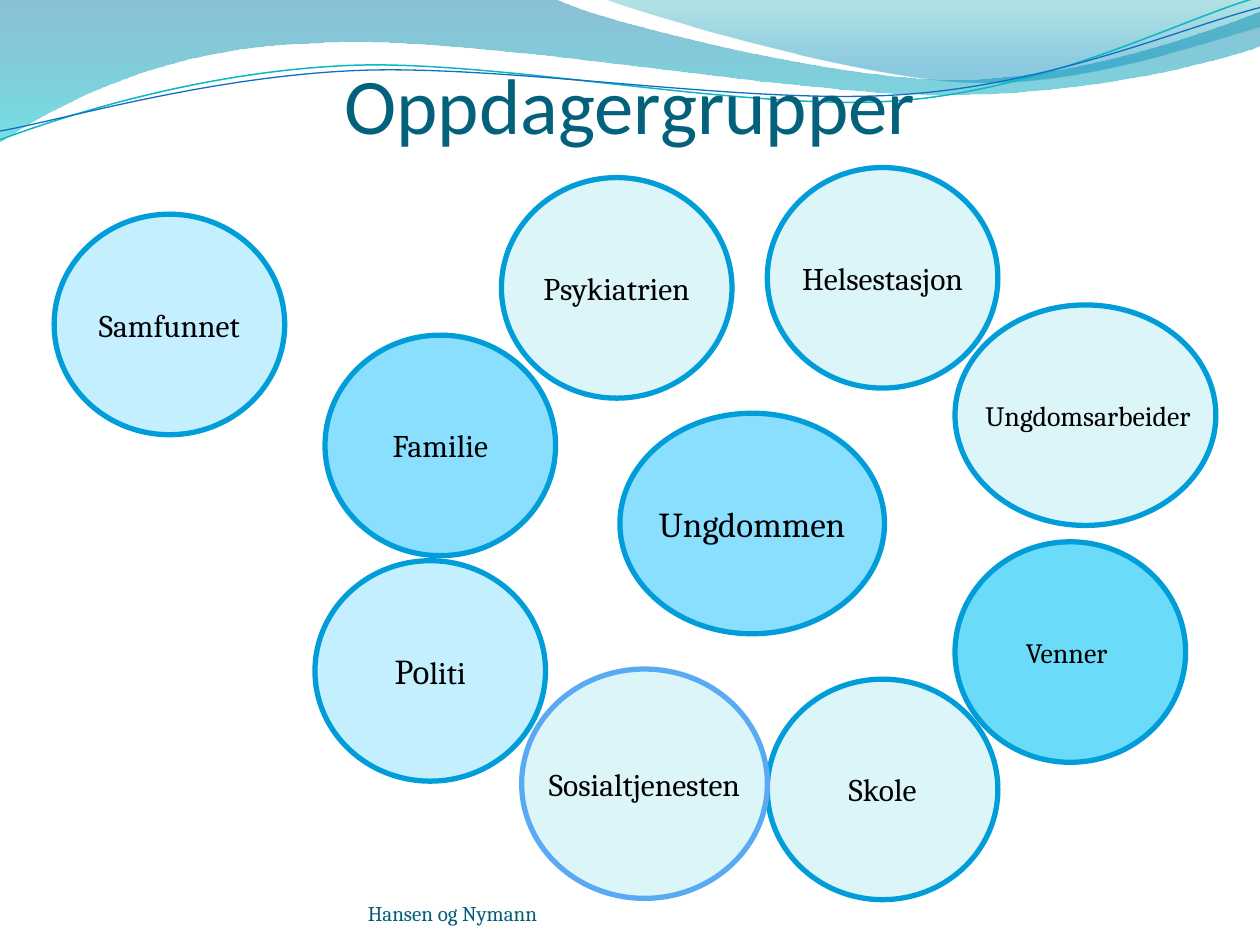
"""Build the Oppdagergrupper slide: a waved header over circles of helpers around the young."""
from dataclasses import dataclass

from lxml import etree
from pptx import Presentation
from pptx.dml.color import RGBColor
from pptx.enum import shapes, text
from pptx.oxml.ns import qn
from pptx.util import Inches, Pt

PALE, ICE, SKY, AQUA = "DBF5F9", "C4EFFF", "8ADFFF", "6BDBFA"


@dataclass
class Circle:
    label: str
    left: float
    top: float
    fill: str
    size: int = 18
    width: float = 1.83
    height: float = 1.75
    line: str = "009DD9"
    shift: float = 0
    lead: str = ""


@dataclass
class Wave:
    start: tuple
    segments: list
    stops: tuple = ()
    line: str = ""
    weight: float = 0


WAVES = [
    Wave((0, 0), [(4.4, -0.01), (4.76, 0.17, 6.64, 0.63, 7.58, 0.63),
                  (8.53, 0.63, 9.58, 0.26, 10, 0.09), (10.01, 0.36),
                  (9.83, 0.44, 8.7, 0.76, 7.46, 0.75), (6.22, 0.75, 3.82, 0.28, 2.57, 0.34),
                  (1.29, 0.36, 0.46, 0.83, -0.01, 1.13)],
         stops=((0, "0074A1", 45), (1, "00C6CF", 55))),
    Wave((4.79, -0.01), [(5.09, 0.11, 6.82, 0.62, 7.69, 0.65),
                         (8.56, 0.69, 9.61, 0.32, 10, 0.21), (10, 0)],
         stops=((0, "00A1A9", 30), (0.8, "008BBF", 45))),
    Wave((0, 1.11), [(0.48, 0.93, 1.58, 0.57, 2.77, 0.52), (3.95, 0.47, 5.93, 0.89, 7.13, 0.8),
                     (8.33, 0.71, 9.38, 0.15, 9.98, -0.02)], line="0AB8BF", weight=0.85),
    Wave((0, 1.04), [(0.47, 0.96, 1.64, 0.61, 2.83, 0.56), (4.03, 0.51, 5.97, 0.84, 7.17, 0.75),
                     (8.36, 0.67, 9.41, 0.21, 10, 0.06)], line="0F6FC6", weight=0.75),
]

CIRCLES = [
    Circle("Ungdommen", 4.92, 3.28, SKY, size=20, width=2.1),
    Circle("Familie", 2.58, 2.66, SKY),
    Circle("Ungdomsarbeider", 7.58, 2.42, PALE, size=16, width=2.07, shift=0.02),
    Circle("Venner", 7.58, 4.3, AQUA, size=16, shift=-0.03),
    Circle("Skole", 6.09, 5.39, PALE),
    Circle("Sosialtjenesten", 4.14, 5.31, PALE, width=1.95, height=1.82, line="59AAF2"),
    Circle("liti", 2.5, 4.45, ICE, lead="Po"),
    Circle("Helsestasjon", 6.09, 1.33, PALE),
    Circle("Psykiatrien", 3.98, 1.41, PALE),
    Circle("Samfunnet", 0.43, 1.7, ICE),
]


def rgb(value: str) -> RGBColor:
    """Turn a hex string into a colour."""
    return RGBColor.from_string(value)


def write(tf, content: str, *, size: float, font: str = "Cambria", color: str = "000000",
          align=text.PP_ALIGN.CENTER) -> None:
    """Append a formatted run to the first paragraph."""
    p = tf.paragraphs[0]
    p.alignment = align
    r = p.add_run()
    r.text = content
    r.font.size, r.font.name = Pt(size), font
    r.font.color.rgb = rgb(color)


def bend(sp, segments: list) -> None:
    """Turn the straight segments that have control points into cubic curves."""
    for node, segment in zip(list(sp.element.spPr.iter(qn("a:lnTo"))), segments):
        if len(segment) == 2:
            continue
        curve = etree.Element(qn("a:cubicBezTo"))
        for x, y in zip(segment[::2], segment[1::2]):
            pt = etree.SubElement(curve, qn("a:pt"))
            pt.set("x", str(Inches(x) - sp.left))
            pt.set("y", str(Inches(y) - sp.top))
        node.getparent().replace(node, curve)


def add_wave(s, wave: Wave) -> None:
    """Draw a gradient band, or an open line when it has no stops."""
    points = [wave.start] + [segment[-2:] for segment in wave.segments]
    emu = [(Inches(x), Inches(y)) for x, y in points]
    builder = s.shapes.build_freeform(*emu[0], scale=1.0)
    builder.add_line_segments(emu[1:], close=bool(wave.stops))
    sp = builder.convert_to_shape()
    bend(sp, wave.segments)
    sp.shadow.inherit = False
    if not wave.stops:
        sp.fill.background()
        sp.line.color.rgb, sp.line.width = rgb(wave.line), Pt(wave.weight)
        return
    sp.line.fill.background()
    sp.fill.gradient()
    sp.fill.gradient_angle = 270
    for stop, (position, color, _) in zip(sp.fill.gradient_stops, wave.stops):
        stop.position, stop.color.rgb = position, rgb(color)
    for node, (_, _, opacity) in zip(sp.element.spPr.iter(qn("a:srgbClr")), wave.stops):
        etree.SubElement(node, qn("a:alpha")).set("val", str(opacity * 1000))


def add_circle(s, circle: Circle) -> None:
    """Draw a labelled ellipse."""
    sp = s.shapes.add_shape(shapes.MSO_SHAPE.OVAL, Inches(circle.left), Inches(circle.top),
                            Inches(circle.width), Inches(circle.height))
    sp.shadow.inherit = False
    sp.fill.solid()
    sp.fill.fore_color.rgb = rgb(circle.fill)
    sp.line.color.rgb, sp.line.width = rgb(circle.line), Pt(3)
    tf = sp.text_frame
    tf.word_wrap, tf.vertical_anchor = False, text.MSO_ANCHOR.MIDDLE
    tf.margin_left = Inches(0.1 + 2 * circle.shift)
    if circle.lead:
        write(tf, circle.lead, size=20)
    write(tf, circle.label, size=circle.size)


def add_textbox(s, left: float, top: float, width: float, height: float):
    """Add a wrapping text box and return its frame."""
    tf = s.shapes.add_textbox(Inches(left), Inches(top), Inches(width), Inches(height)).text_frame
    tf.word_wrap = True
    return tf


def main() -> None:
    """Build and save the slide."""
    prs = Presentation()
    prs.slide_width, prs.slide_height = Inches(10), Inches(7.5)
    s = prs.slides.add_slide(prs.slide_layouts[6])
    for wave in WAVES:
        add_wave(s, wave)
    for circle in CIRCLES:
        add_circle(s, circle)
    write(add_textbox(s, 0, 0.39, 10, 0.86), "Oppdagergrupper",
          size=45, font="Calibri", color="04617B")
    tf = add_textbox(s, 2.92, 6.95, 3.67, 0.4)
    tf.vertical_anchor = text.MSO_ANCHOR.BOTTOM
    tf.margin_left = tf.margin_top = tf.margin_right = tf.margin_bottom = 0
    write(tf, "Hansen og Nymann", size=12, color="045D75", align=text.PP_ALIGN.LEFT)
    prs.save("out.pptx")


if __name__ == "__main__":
    main()
